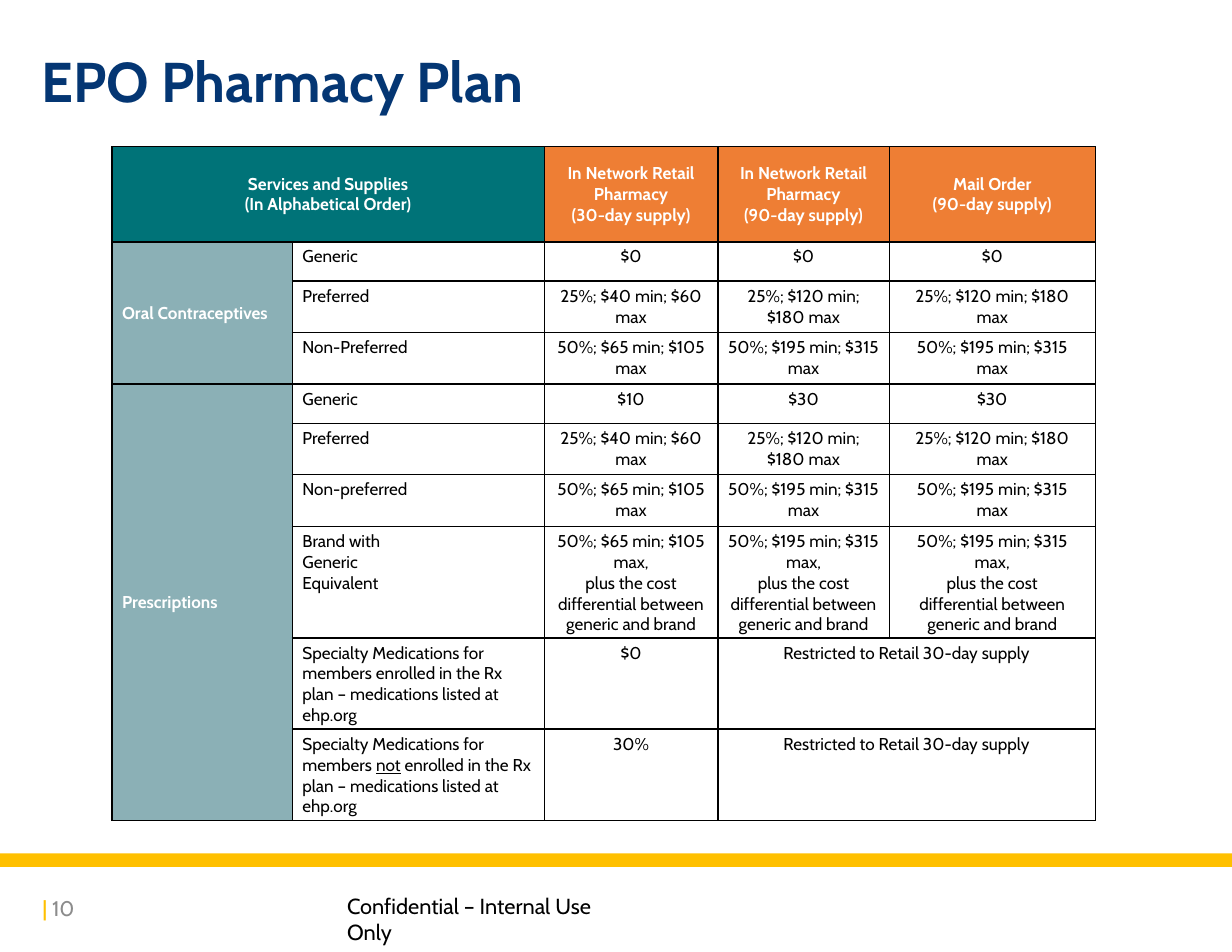
from lxml.etree import SubElement
from pptx import Presentation
from pptx.dml.color import RGBColor
from pptx.enum.shapes import MSO_SHAPE
from pptx.enum.text import MSO_ANCHOR as ANCHOR, PP_ALIGN as ALIGN
from pptx.oxml.ns import qn
from pptx.util import Inches, Pt

FONT = "Cabin"
NAVY, GOLD, GREY = "043673", "FFC000", "8C8C8C"
TEAL, ORANGE, SAGE = "007378", "EE7E34", "8BB0B6"
WHITE, BLACK = "FFFFFF", "000000"

COL_WIDTHS = [1.61, 2.25, 1.55, 1.53, 1.84]
ROW_HEIGHTS = [0.85, 0.35, 0.46, 0.46, 0.35, 0.46, 0.46, 0.95, 0.51, 0.51]

PREFERRED = ["25%; $40 min; $60 max"] + ["25%; $120 min; $180 max"] * 2
NON_PREFERRED = ["50%; $65 min; $105 max"] + ["50%; $195 min; $315 max"] * 2
BRAND = [f"{price},\nplus the cost\ndifferential between\ngeneric and brand"
         for price in NON_PREFERRED]
RETAIL_ONLY = "Restricted to Retail 30-day supply"
SPECIALTY = ("Specialty Medications for members ",
             "enrolled in the Rx plan – medications listed at ehp.org")

HEADERS = ["Services and Supplies\n(In Alphabetical Order)", "",
           "In Network Retail Pharmacy\n(30-day supply)",
           "In Network Retail Pharmacy\n(90-day supply)",
           "Mail Order\n(90-day supply)"]
GROUPS = [
    ("Oral Contraceptives", [
        ["Generic", "$0", "$0", "$0"],
        ["Preferred", *PREFERRED],
        ["Non-Preferred", *NON_PREFERRED],
    ]),
    ("Prescriptions", [
        ["Generic", "$10", "$30", "$30"],
        ["Preferred", *PREFERRED],
        ["Non-preferred", *NON_PREFERRED],
        ["Brand with\nGeneric\nEquivalent", *BRAND],
        ["".join(SPECIALTY), "$0", RETAIL_ONLY],
        ["_".join((SPECIALTY[0], "not", " " + SPECIALTY[1])), "30%", RETAIL_ONLY],
    ]),
]


def rgb(value):
    return RGBColor.from_string(value)


def style(font, size, color, bold=False):
    font.name, font.size, font.bold = FONT, Pt(size), bold
    font.color.rgb = rgb(color)


def add_borders(cell):
    tc_pr = cell._tc.get_or_add_tcPr()
    for side in ("a:lnL", "a:lnR", "a:lnT", "a:lnB"):
        ln = SubElement(tc_pr, qn(side), w=str(Pt(1)))
        fill = SubElement(ln, qn("a:solidFill"))
        SubElement(fill, qn("a:srgbClr"), val=BLACK)


def fill_cell(cell, text, fill=WHITE, color=BLACK, bold=False,
              align=ALIGN.LEFT, anchor=ANCHOR.TOP):
    """Write text one paragraph a line; words between underscores are underlined."""
    cell.fill.solid()
    cell.fill.fore_color.rgb = rgb(fill)
    cell.margin_left = cell.margin_right = Inches(0.09)
    cell.margin_top = cell.margin_bottom = Inches(0.04)
    cell.vertical_anchor = anchor
    tf = cell.text_frame
    for i, line in enumerate(text.split("\n")):
        p = tf.add_paragraph() if i else tf.paragraphs[0]
        p.alignment = align
        style(p.font, 11, color, bold)
        for j, part in enumerate(line.split("_")):
            r = p.add_run()
            r.text = part
            if j % 2:
                r.font.underline = True


def add_plan_table(slide):
    frame = slide.shapes.add_table(len(ROW_HEIGHTS), len(COL_WIDTHS), Inches(1),
                                   Inches(1.31), Inches(8.79), Inches(5.86))
    table = frame.table
    table.horz_banding = False
    for column, width in zip(table.columns, COL_WIDTHS):
        column.width = Inches(width)
    for row, height in zip(table.rows, ROW_HEIGHTS):
        row.height = Inches(height)
    for cell in table.iter_cells():
        add_borders(cell)

    table.cell(0, 0).merge(table.cell(0, 1))
    for c, header in enumerate(HEADERS):
        if header:
            fill_cell(table.cell(0, c), header, ORANGE if c else TEAL, WHITE, True,
                      ALIGN.CENTER, ANCHOR.MIDDLE)

    top = 1
    for group, rows in GROUPS:
        group_cell = table.cell(top, 0)
        group_cell.merge(table.cell(top + len(rows) - 1, 0))
        fill_cell(group_cell, group, SAGE, WHITE, True, anchor=ANCHOR.MIDDLE)
        for r, values in enumerate(rows, top):
            if len(values) == 3:
                table.cell(r, 3).merge(table.cell(r, 4))
            for c, value in enumerate(values, 1):
                fill_cell(table.cell(r, c), value,
                          align=ALIGN.LEFT if c == 1 else ALIGN.CENTER)
        top += len(rows)


def place(sp, left, top, width, height):
    sp.left, sp.top = Inches(left), Inches(top)
    sp.width, sp.height = Inches(width), Inches(height)


def add_title(slide, text):
    title = slide.shapes.title
    place(title, 0.37, 0.43, 7.81, 1.18)
    tf = title.text_frame
    tf.text = text
    tf.margin_left = tf.margin_right = 0
    tf.vertical_anchor = ANCHOR.TOP
    p = tf.paragraphs[0]
    p.alignment, p.line_spacing = ALIGN.LEFT, 0.9
    style(p.font, 36, NAVY, True)


def add_text(slide, box, runs, size, anchor=ANCHOR.TOP):
    """Add one line of (text, colour, bold) runs."""
    tf = slide.shapes.add_textbox(*map(Inches, box)).text_frame
    tf.word_wrap = True
    tf.vertical_anchor = anchor
    for text, color, bold in runs:
        r = tf.paragraphs[0].add_run()
        r.text = text
        style(r.font, size, color, bold)


def add_footer_band(slide, prs):
    band = slide.shapes.add_shape(MSO_SHAPE.RECTANGLE, 0, Inches(7.62),
                                  prs.slide_width, Inches(0.12))
    band.shadow.inherit = False
    band.fill.solid()
    band.fill.fore_color.rgb = rgb(GOLD)
    band.line.fill.background()


def main():
    prs = Presentation()
    prs.slide_width, prs.slide_height = Inches(11), Inches(8.5)
    slide = prs.slides.add_slide(prs.slide_layouts[5])
    add_footer_band(slide, prs)
    add_text(slide, (3, 7.92, 2.81, 0.34),
             [("Confidential – Internal Use Only", BLACK, False)], 14)
    add_title(slide, "EPO Pharmacy Plan")
    add_text(slide, (0.28, 7.88, 3.4, 0.45),
             [("| ", GOLD, True), ("10", GREY, False)], 13.6, ANCHOR.MIDDLE)
    add_plan_table(slide)
    prs.save("out.pptx")


if __name__ == "__main__":
    main()
